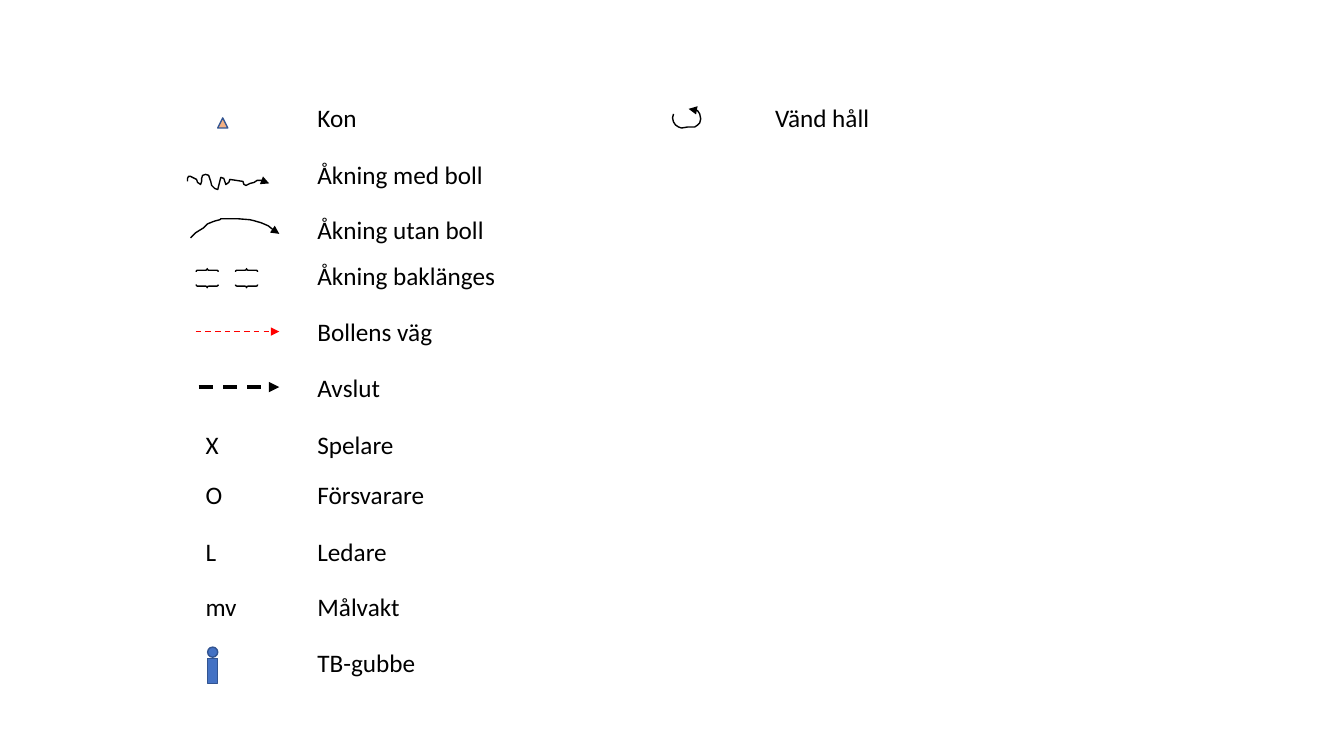
from functools import partial

from lxml.etree import SubElement
from pptx import Presentation
from pptx.dml.color import RGBColor
from pptx.enum.dml import MSO_LINE
from pptx.enum.shapes import MSO_CONNECTOR, MSO_SHAPE
from pptx.enum.text import MSO_AUTO_SIZE
from pptx.oxml.ns import qn
from pptx.util import Inches, Pt

BLACK = RGBColor(0x00, 0x00, 0x00)
RED = RGBColor(0xFF, 0x00, 0x00)
BLUE = RGBColor(0x44, 0x72, 0xC4)
ORANGE = RGBColor(0xF4, 0xB1, 0x83)
OUTLINE = RGBColor(0x32, 0x54, 0x91)

TEXT_FORMAT = {"name": "Calibri", "size": Pt(18)}
LABEL_OFFSET = 1.19
LABEL_WIDTH = 2.03
TEXT_HEIGHT = 0.4

# Outlines in hundredths of an inch from the corner of their row
WAVE = [(0, 27), (0, 24), (1, 22), (3, 22), (9, 25), (10, 28), (13, 30), (14, 27),
        (14, 24), (15, 21), (18, 20), (21, 21), (23, 27), (24, 31), (27, 34), (30, 35),
        (32, 27), (33, 23), (36, 24), (37, 27), (38, 30), (41, 28), (42, 25), (55, 27),
        (56, 30), (58, 31), (62, 29), (66, 28), (69, 26), (76, 26), (81, 29)]
ARC = [(3, 28), (6, 25), (8, 23), (11, 21), (16, 18), (20, 14), (25, 12), (28, 11),
       (32, 10), (33, 9), (50, 9), (62, 10), (66, 11), (73, 13), (80, 16), (85, 20),
       (91, 24)]
TURN = [(28, 16), (27, 20), (28, 24), (30, 27), (33, 29), (36, 30), (42, 29),
        (49, 29), (52, 27), (54, 25), (55, 21), (54, 16), (52, 13), (48, 11), (43, 11)]


def style_line(shape, color, width=1.0, dash=None, arrow=False):
    for name, value in {"width": Pt(width), "dash_style": dash}.items():
        setattr(shape.line, name, value)
    shape.line.color.rgb = color
    if arrow:
        SubElement(shape.line._get_or_add_ln(), qn("a:tailEnd"), type="triangle")


def add_text(slide, left, top, text, width=LABEL_WIDTH):
    box = slide.shapes.add_textbox(
        Inches(left), Inches(top), Inches(width), Inches(TEXT_HEIGHT))
    box.text_frame.word_wrap = True
    box.text_frame.auto_size = MSO_AUTO_SIZE.SHAPE_TO_FIT_TEXT
    paragraph = box.text_frame.paragraphs[0]
    paragraph.text = text
    for name, value in TEXT_FORMAT.items():
        setattr(paragraph.font, name, value)
    paragraph.font.color.rgb = BLACK


def add_figure(slide, kind, left, top, width, height, fill=None, outline=OUTLINE):
    shape = slide.shapes.add_shape(
        kind, Inches(left), Inches(top), Inches(width), Inches(height))
    shape.shadow.inherit = False
    if fill is None:
        shape.fill.background()
    else:
        shape.fill.solid()
        shape.fill.fore_color.rgb = fill
    style_line(shape, outline)
    return shape


# Symbols: each is placed from the left and top of its row
def draw_cone(slide, left, top):
    add_figure(slide, MSO_SHAPE.ISOSCELES_TRIANGLE,
               left + 0.3, top + 0.2, 0.1, 0.1, ORANGE)


def draw_path(slide, left, top, points):
    start, *others = points
    builder = slide.shapes.build_freeform(*start, scale=Inches(0.01))
    builder.add_line_segments(others, close=False)
    shape = builder.convert_to_shape(Inches(left), Inches(top))
    shape.shadow.inherit = False
    shape.fill.background()
    style_line(shape, BLACK, arrow=True)


def draw_braces(slide, left, top):
    for offset in (0.1, 0.49):
        brace = add_figure(slide, MSO_SHAPE.DOUBLE_BRACE,
                           left + offset, top + 0.12, 0.19, 0.22, outline=BLACK)
        brace.rotation = 90


def draw_dashed_arrow(slide, left, top, start, color, width):
    y = Inches(top + 0.2)
    arrow = slide.shapes.add_connector(
        MSO_CONNECTOR.STRAIGHT, Inches(left + start), y, Inches(left + 0.91), y)
    style_line(arrow, color, width, MSO_LINE.DASH, arrow=True)
    SubElement(arrow._element.spPr, qn("a:effectLst"))


def draw_letters(slide, left, top, text, width):
    add_text(slide, left + 0.08, top, text, width)


def draw_dummy(slide, left, top):
    add_figure(slide, MSO_SHAPE.OVAL, left + 0.2, top + 0.05, 0.1, 0.1, BLUE)
    add_figure(slide, MSO_SHAPE.RECTANGLE, left + 0.2, top + 0.16, 0.1, 0.25, BLUE)


LEFT_ROWS = [
    (0.97, "Kon", draw_cone),
    (1.53, "Åkning med boll", partial(draw_path, points=WAVE)),
    (2.08, "Åkning utan boll", partial(draw_path, points=ARC)),
    (2.53, "Åkning baklänges", draw_braces),
    (3.09, "Bollens väg", partial(draw_dashed_arrow, start=0.08, color=RED, width=1)),
    (3.64, "Avslut", partial(draw_dashed_arrow, start=0.11, color=BLACK, width=2.5)),
    (4.21, "Spelare", partial(draw_letters, text="X", width=0.32)),
    (4.71, "Försvarare", partial(draw_letters, text="O", width=0.43)),
    (5.27, "Ledare", partial(draw_letters, text="L", width=0.43)),
    (5.82, "Målvakt", partial(draw_letters, text="mv", width=0.63)),
    (6.37, "TB-gubbe", draw_dummy),
]
RIGHT_ROWS = [(0.97, "Vänd håll", partial(draw_path, points=TURN))]


def add_legend_column(slide, left, rows):
    for top, label, draw_symbol in rows:
        draw_symbol(slide, left, top)
        add_text(slide, left + LABEL_OFFSET, top, label)


def main():
    presentation = Presentation()
    presentation.slide_width = Inches(13.33)
    presentation.slide_height = Inches(7.5)
    slide = presentation.slides.add_slide(presentation.slide_layouts[6])
    add_legend_column(slide, 1.86, LEFT_ROWS)
    add_legend_column(slide, 6.4, RIGHT_ROWS)
    presentation.save("out.pptx")


if __name__ == "__main__":
    main()
